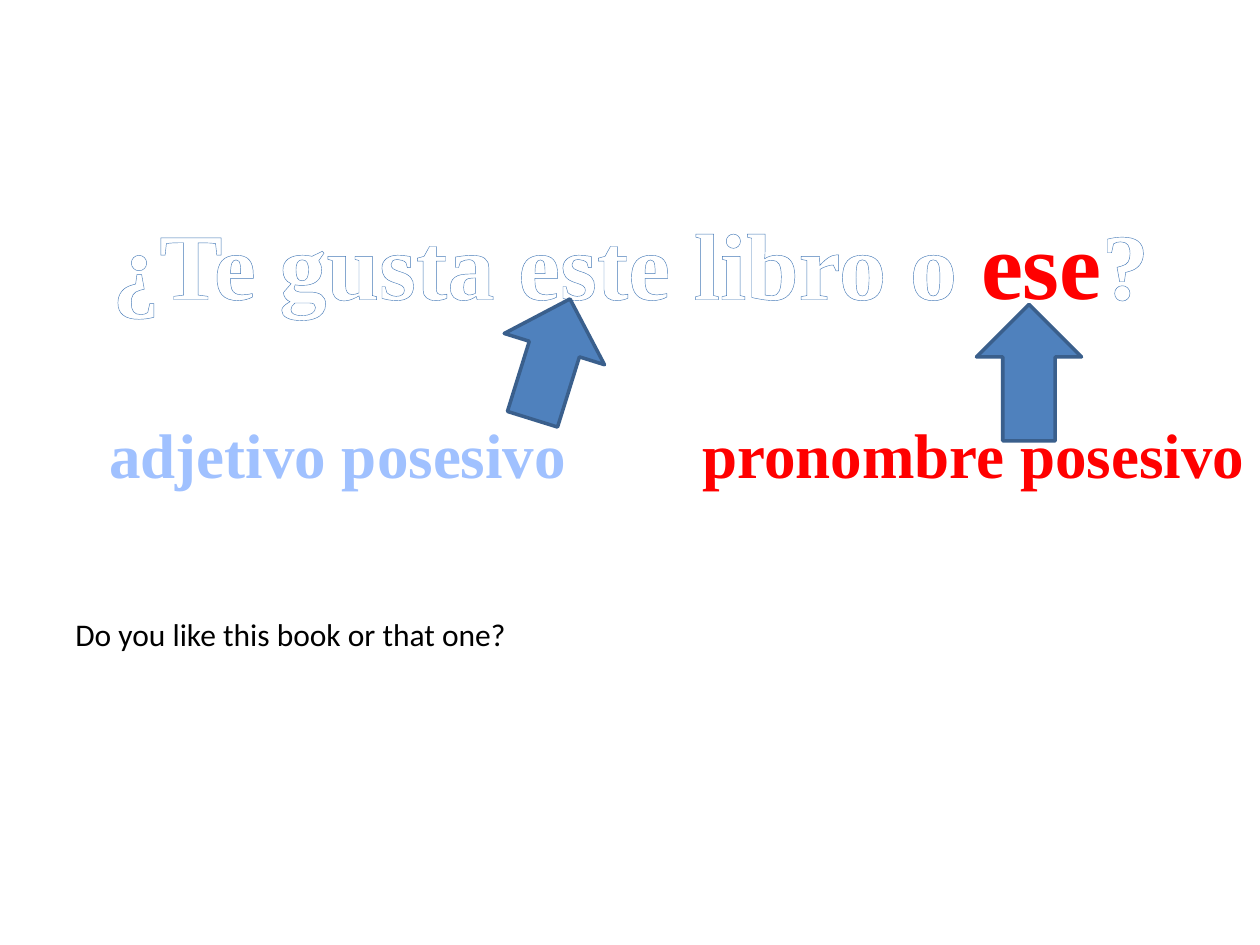
from lxml.etree import SubElement
from pptx import Presentation
from pptx.dml.color import RGBColor
from pptx.enum.shapes import MSO_SHAPE as Shape
from pptx.enum.text import MSO_AUTO_SIZE as AutoSize, PP_ALIGN as Align
from pptx.oxml.ns import qn
from pptx.util import Pt

COLORS = {
    "white": "FFFFFF",
    "red": "FF0000",
    "black": "000000",
    "light_blue": "A0C1FF",
    "outline": "467AB8",
    "arrow_fill": "4F81BD",
    "arrow_line": "3A5F8C",
}
SERIF = "Times New Roman"


def rgb(name):
    return RGBColor.from_string(COLORS[name])


def outline_run(run, width):
    properties = run.font._element
    line = SubElement(properties, qn("a:ln"), w=str(Pt(width)))
    fill = SubElement(line, qn("a:solidFill"))
    SubElement(fill, qn("a:srgbClr"), val=COLORS["outline"])
    properties.insert(0, line)


def add_text(slide, box, runs, size, font=SERIF, bold=True, align=Align.CENTER,
             wrap=False, outline=None):
    shape = slide.shapes.add_textbox(*map(Pt, box))
    frame = shape.text_frame
    frame.word_wrap = wrap
    frame.auto_size = AutoSize.SHAPE_TO_FIT_TEXT
    paragraph = frame.paragraphs[0]
    paragraph.alignment = align
    paragraph.font.name = font
    paragraph.font.size = Pt(size)
    paragraph.font.bold = bold
    for text, color in runs:
        run = paragraph.add_run()
        run.text = text
        run.font.name = font
        run.font.size = Pt(size)
        run.font.bold = bold
        run.font.color.rgb = rgb(color)
        if outline:
            outline_run(run, outline)


def add_up_arrow(slide, box, rotation=0):
    arrow = slide.shapes.add_shape(Shape.UP_ARROW, *map(Pt, box))
    arrow.shadow.inherit = False
    arrow.rotation = rotation
    arrow.fill.solid()
    arrow.fill.fore_color.rgb = rgb("arrow_fill")
    arrow.line.color.rgb = rgb("arrow_line")
    arrow.line.width = Pt(2)


def main():
    presentation = Presentation()
    presentation.slide_width = Pt(720)
    presentation.slide_height = Pt(540)
    slide = presentation.slides.add_slide(presentation.slide_layouts[6])

    question = [("¿Te gusta este libro o ", "white"), ("ese", "red"), ("?", "white")]
    add_text(slide, (54, 113.75, 612.75, 72.75), question, 54, outline=2.48)
    add_text(slide, (54, 234, 278, 51), [("adjetivo posesivo", "light_blue")], 36,
             outline=0.83)
    add_text(slide, (392.5, 234, 327.5, 51), [("pronombre posesivo", "red")], 36,
             outline=0.83)
    add_up_arrow(slide, (285, 169.25, 60, 72), rotation=17.3)
    add_up_arrow(slide, (558, 174, 60, 78))
    add_text(slide, (36, 348, 552, 29),
             [("Do you like this book or that one?", "black")], 18,
             font="Calibri", bold=False, align=Align.LEFT, wrap=True)

    presentation.save("out.pptx")


if __name__ == "__main__":
    main()
